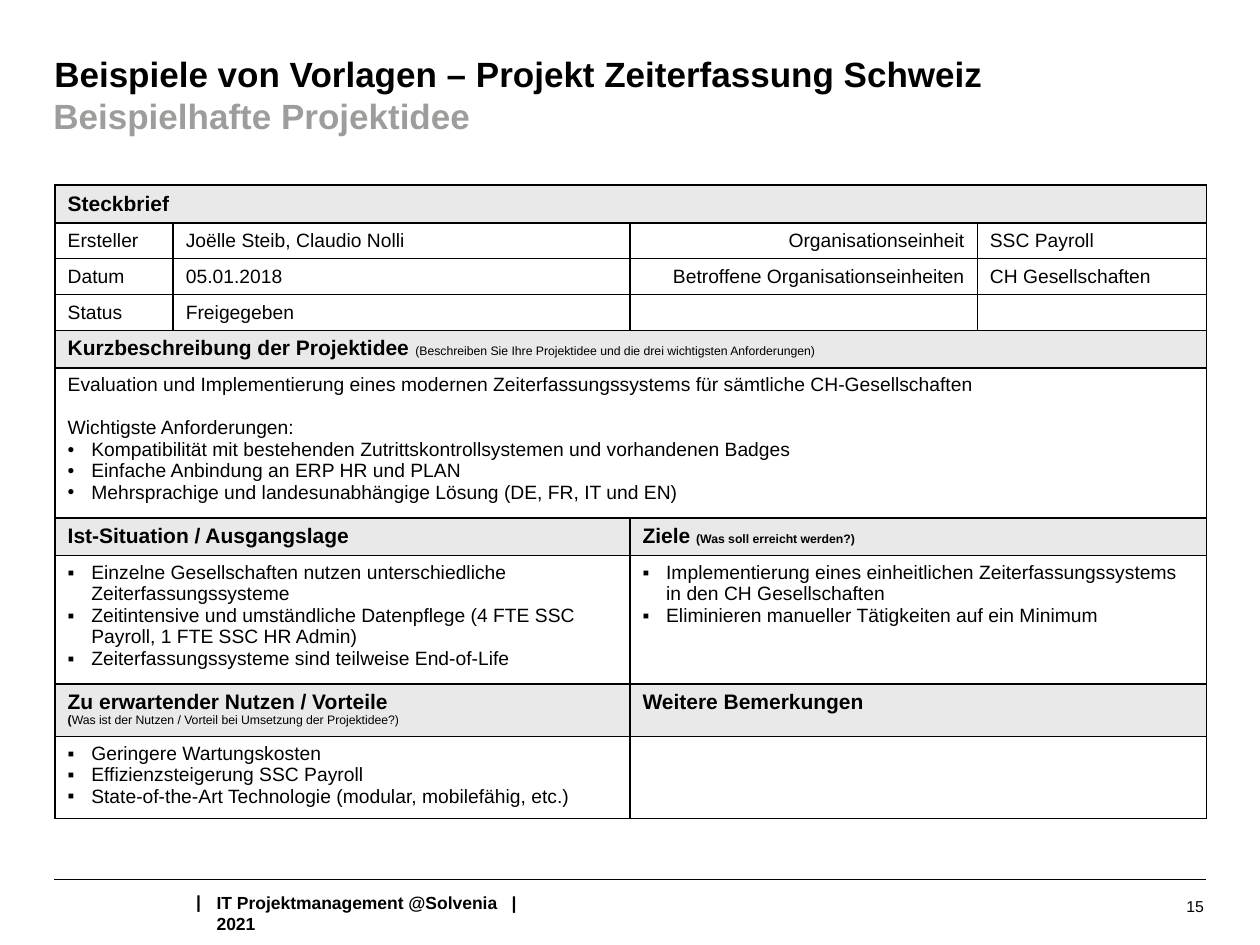
from lxml.etree import SubElement as Sub
from pptx import Presentation
from pptx.dml.color import RGBColor
from pptx.enum.shapes import MSO_CONNECTOR as Conn
from pptx.enum.text import MSO_ANCHOR as Anchor, PP_ALIGN as Align
from pptx.oxml.ns import qn
from pptx.util import Pt

BLACK, GREY, SHADE = "000000", "9D9D9C", "E9E9EA"
LEFT, MID, RIGHT = Align.LEFT, Anchor.MIDDLE, Align.RIGHT


def tint(code):
    return RGBColor.from_string(code)


class Sheet:
    """Holds the style and the slide, and draws each kind of element."""

    def __init__(self, deck, font="Arial"):
        self.font = font
        self.slide = deck.slides.add_slide(deck.slide_layouts[6])
        self.shapes = self.slide.shapes

    def run(self, para, text, size, bold=False, color=BLACK):
        run = para.add_run()
        run.text = text
        font = run.font
        font.name, font.size, font.bold = self.font, Pt(size), bold
        font.color.rgb = tint(color)

    def label(self, box, text, size, bold=True, color=BLACK, inset=7.2,
              align=LEFT, anchor=Anchor.TOP, wrap=True):
        frame = self.shapes.add_textbox(*map(Pt, box)).text_frame
        frame.word_wrap, frame.vertical_anchor = wrap, anchor
        frame.margin_left = Pt(inset)
        para = frame.paragraphs[0]
        para.alignment = align
        self.run(para, text, size, bold, color)

    def line(self, x1, y1, x2, y2, width=0.75):
        line = self.shapes.add_connector(Conn.STRAIGHT, *map(Pt, (x1, y1, x2, y2)))
        line.line.color.rgb, line.line.width = tint(BLACK), Pt(width)
        Sub(line._element.spPr, qn("a:effectLst"))

    def grid(self, left, top, widths, heights):
        frame = self.shapes.add_table(len(heights), len(widths), Pt(left), Pt(top),
                                      Pt(sum(widths)), Pt(sum(heights)))
        table = frame.table
        table.first_row = table.horz_banding = False
        for col, width in zip(table.columns, widths):
            col.width = Pt(width)
        for row, height in zip(table.rows, heights):
            row.height = Pt(height)
        for cell in table.iter_cells():
            self.border(cell)
            cell.fill.background()
            Sub(cell.text_frame.paragraphs[0]._p, qn("a:endParaRPr"), sz="1100")
        return table

    def border(self, cell, width=1):
        props = cell._tc.get_or_add_tcPr()
        for side in ("lnL", "lnR", "lnT", "lnB"):
            edge = Sub(props, qn(f"a:{side}"), w=str(Pt(width)))
            Sub(Sub(edge, qn("a:solidFill")), qn("a:srgbClr"), val=BLACK)

    def cell(self, table, row, first, last, paras, fill=None, mark=None,
             align=LEFT, anchor=Anchor.TOP):
        cell = table.cell(row, first)
        if last > first:
            cell.merge(table.cell(row, last))
        if fill:
            cell.fill.solid()
            cell.fill.fore_color.rgb = tint(fill)
        cell.vertical_anchor = anchor
        frame = cell.text_frame
        for i, runs in enumerate(paras):
            para = frame.add_paragraph() if i else frame.paragraphs[0]
            para.alignment = align
            if mark:
                self.bullet(para, mark)
            for run in runs:
                self.run(para, *run)
        return frame

    def bullet(self, para, mark, indent=13.5):
        props = para._p.get_or_add_pPr()
        props.set("marL", str(Pt(indent)))
        props.set("indent", str(-Pt(indent)))
        Sub(props, qn("a:buFont"), typeface=self.font)
        Sub(props, qn("a:buChar"), char=mark)


def body(*lines):
    return [[(line, 11)] for line in lines]


def main():
    deck = Presentation()
    deck.slide_width, deck.slide_height = Pt(720), Pt(540)
    sheet = Sheet(deck)

    sheet.line(31, 502.5, 689, 502.5)
    sheet.label((105, 505.5, 17, 19.5), "|", 10, wrap=False)
    sheet.label((116.7, 506.2, 214.5, 19.5),
                "IT Projektmanagement @Solvenia   |   2021", 10, wrap=False)
    sheet.label((527, 500.5, 168, 34.5), "15", 9, False, align=RIGHT, anchor=MID)
    sheet.label((31, 26.6, 658, 28),
                "Beispiele von Vorlagen – Projekt Zeiterfassung Schweiz", 20, inset=0)
    sheet.label((30.5, 50.4, 658, 28), "Beispielhafte Projektidee", 20,
                color=GREY, inset=0)

    table = sheet.grid(31.5, 105.8, (67.5, 261, 198.5, 131),
                       (21, 20, 20, 20, 21, 83.5, 21, 71, 29, 44))

    facts = [
        ("Ersteller", "Joëlle Steib, Claudio Nolli", "Organisationseinheit", "SSC Payroll"),
        ("Datum", "05.01.2018", "Betroffene Organisationseinheiten", "CH Gesellschaften"),
        ("Status", "Freigegeben"),
    ]
    for row, fact in enumerate(facts, 1):
        for col, text in enumerate(fact):
            sheet.cell(table, row, col, col, body(text), anchor=MID,
                       align=RIGHT if col == 2 else LEFT)

    heads = [
        (0, 0, 3, [[("Steckbrief", 12, True)]]),
        (4, 0, 3, [[("Kurzbeschreibung der Projektidee ", 12, True),
                    ("(Beschreiben Sie Ihre Projektidee und die drei "
                     "wichtigsten Anforderungen)", 7)]]),
        (6, 0, 1, [[("Ist-Situation / Ausgangslage", 12, True)]]),
        (6, 2, 3, [[("Ziele ", 12, True), ("(Was soll erreicht werden?)", 7, True)]]),
        (8, 0, 1, [[("Zu erwartender Nutzen / Vorteile", 12, True)],
                   [("(", 7, True), ("Was ist der Nutzen / Vorteil bei Umsetzung "
                                     "der Projektidee?)", 7)]]),
        (8, 2, 3, [[("Weitere Bemerkungen", 12, True)]]),
    ]
    for row, first, last, paras in heads:
        sheet.cell(table, row, first, last, paras, SHADE,
                   anchor=Anchor.TOP if row else MID)

    brief = sheet.cell(table, 5, 0, 3, body(
        "Evaluation und Implementierung eines modernen Zeiterfassungssystems "
        "für sämtliche CH-Gesellschaften",
        "Wichtigste Anforderungen:",
        "Kompatibilität mit bestehenden Zutrittskontrollsystemen und vorhandenen Badges",
        "Einfache Anbindung an ERP HR und PLAN",
        "Mehrsprachige und landesunabhängige Lösung (DE, FR, IT und EN)"))
    brief.paragraphs[1].space_before = Pt(12.3)
    for para in brief.paragraphs[2:]:
        sheet.bullet(para, "•")

    lists = [
        (7, 0, ("Einzelne Gesellschaften nutzen unterschiedliche Zeiterfassungssysteme",
                "Zeitintensive und umständliche Datenpflege (4 FTE SSC Payroll, "
                "1 FTE SSC HR Admin)",
                "Zeiterfassungssysteme sind teilweise End-of-Life")),
        (7, 2, ("Implementierung eines einheitlichen Zeiterfassungssystems "
                "in den CH Gesellschaften",
                "Eliminieren manueller Tätigkeiten auf ein Minimum")),
        (9, 0, ("Geringere Wartungskosten", "Effizienzsteigerung SSC Payroll",
                "State-of-the-Art Technologie (modular, mobilefähig, etc.)")),
        (9, 2, ()),
    ]
    for row, col, lines in lists:
        sheet.cell(table, row, col, col + 1, body(*lines), mark="▪")

    deck.save("out.pptx")


if __name__ == "__main__":
    main()
